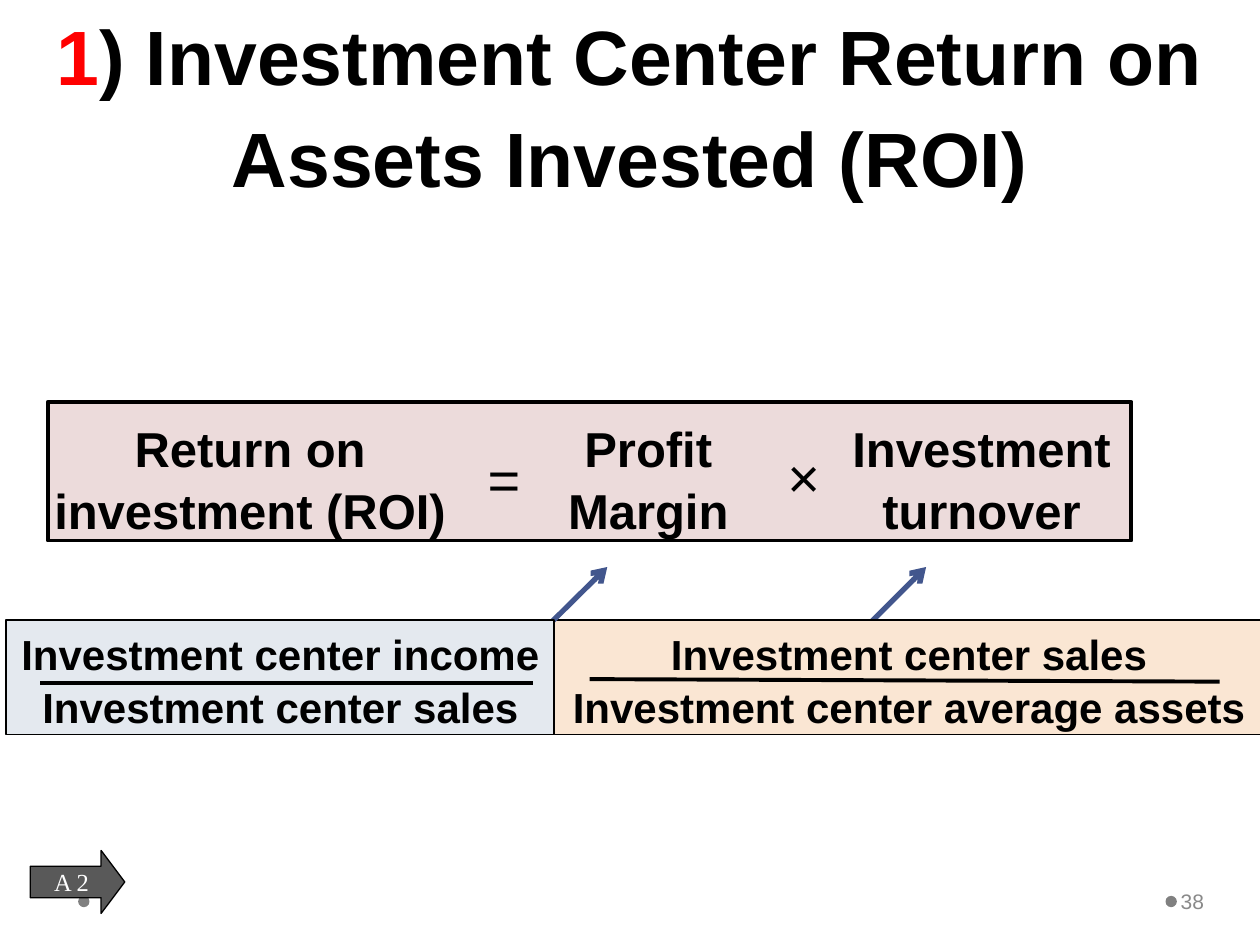
from dataclasses import dataclass

from lxml import etree
from pptx import Presentation
from pptx.dml.color import RGBColor
from pptx.enum import shapes, text
from pptx.oxml import ns
from pptx.util import Inches, Pt

BLACK = RGBColor(0x00, 0x00, 0x00)
WHITE = RGBColor(0xFF, 0xFF, 0xFF)
RED = RGBColor(0xFF, 0x00, 0x00)
DOT_GRAY = RGBColor(0x80, 0x80, 0x80)
NUMBER_GRAY = RGBColor(0x89, 0x89, 0x89)
ARROW_BLUE = RGBColor(0x42, 0x56, 0x8D)
FORMULA_PINK = RGBColor(0xEC, 0xDB, 0xDB)
SALES_ORANGE = RGBColor(0xFA, 0xE6, 0xD3)
INCOME_BLUE = RGBColor(0xE4, 0xE9, 0xEF)
BUTTON_GRAY = RGBColor(0x59, 0x59, 0x59)

CENTER = text.PP_ALIGN.CENTER
RECT = shapes.MSO_SHAPE.RECTANGLE


@dataclass
class Term:
    """A word or operator of the ROI formula."""
    wording: str
    left: float
    top: float
    width: float
    height: float = 1.04
    size: int = 28
    bold: bool = True


@dataclass
class Fraction:
    """A ratio in a box, with its bar and the arrow to its formula term."""
    wording: str
    left: float
    width: float
    fill: RGBColor
    bar: tuple[float, float, float, float]
    arrow: tuple[float, float, float, float]


TERMS = [
    Term("Return on\ninvestment (ROI)", 0.32, 3.25, 3.33),
    Term("=", 3.77, 3.45, 0.46, 0.64, 32, False),
    Term("Profit\nMargin", 4.23, 3.25, 1.83),
    Term("Investment\nturnover", 6.32, 3.25, 2.94),
    Term("×", 6.15, 3.44, 0.46, 0.64, 32, False),
]
FRACTIONS = [
    Fraction("Investment center sales\nInvestment center average assets", 4.4, 5.63,
             SALES_ORANGE, (4.68, 5.39, 9.68, 5.41), (6.52, 5.33, 7.35, 4.5)),
    Fraction("Investment center income\nInvestment center sales", 0.05, 4.35,
             INCOME_BLUE, (0.32, 5.42, 4.23, 5.42), (3.98, 5.33, 4.82, 4.5)),
]


def style_font(font, size: float, color: RGBColor, bold=False, name="Arial") -> None:
    font.name, font.size, font.bold = name, Pt(size), bold
    font.color.rgb = color


def write(shape, wording: str, size: float, color=BLACK, bold=False, name="Arial",
          align=CENTER, anchor=text.MSO_ANCHOR.TOP, wrap=True, spacing=1.05) -> None:
    frame = shape.text_frame
    frame.word_wrap = wrap
    frame.vertical_anchor = anchor
    paragraph = frame.paragraphs[0]
    paragraph.text = wording.replace("\n", "\v")
    paragraph.alignment = align
    paragraph.line_spacing = spacing
    for run in paragraph.runs:
        style_font(run.font, size, color, bold, name)


def add_filled(slide, kind, box: tuple, fill: RGBColor, line_width: float = 0):
    shape = slide.shapes.add_shape(kind, *map(Inches, box))
    shape.shadow.inherit = False
    shape.fill.solid()
    shape.fill.fore_color.rgb = fill
    if line_width:
        shape.line.color.rgb = BLACK
        shape.line.width = Pt(line_width)
    else:
        shape.line.fill.background()
    return shape


def add_line(slide, ends: tuple, color: RGBColor, width: float, arrow=False) -> None:
    line = slide.shapes.add_connector(shapes.MSO_CONNECTOR.STRAIGHT, *map(Inches, ends))
    line.line.color.rgb = color
    line.line.width = Pt(width)
    if arrow:
        etree.SubElement(line.line._get_or_add_ln(), ns.qn("a:tailEnd"), type="arrow")
    etree.SubElement(line._element.spPr, ns.qn("a:effectLst"))


def add_title(slide) -> None:
    title = slide.shapes.title
    title.left, title.top, title.width, title.height = map(Inches, (0, 0.41, 10, 1.25))
    frame = title.text_frame
    frame.word_wrap = True
    frame.auto_size = text.MSO_AUTO_SIZE.NONE
    frame.vertical_anchor = text.MSO_ANCHOR.BOTTOM
    paragraph = frame.paragraphs[0]
    paragraph.alignment = CENTER
    paragraph.line_spacing = Pt(58)
    for wording, color in (("1", RED),
                           (") Investment Center Return on Assets Invested (ROI)", BLACK)):
        run = paragraph.add_run()
        run.text = wording
        style_font(run.font, 44, color, True)


def add_term(slide, term: Term) -> None:
    box = slide.shapes.add_textbox(
        *map(Inches, (term.left, term.top, term.width, term.height)))
    write(box, term.wording, term.size, bold=term.bold, wrap=term.bold)


def add_fraction(slide, fraction: Fraction) -> None:
    add_line(slide, fraction.arrow, ARROW_BLUE, 3, arrow=True)
    box = add_filled(slide, RECT, (fraction.left, 4.92, fraction.width, 0.91),
                     fraction.fill, 1)
    write(box, fraction.wording, 24, bold=True)
    add_line(slide, fraction.bar, BLACK, 2.25)


def add_page_number(slide) -> None:
    number = slide.shapes.add_textbox(*map(Inches, (9.34, 6.95, 0.61, 0.4)))
    write(number, "38", 12, NUMBER_GRAY, align=text.PP_ALIGN.LEFT,
          anchor=text.MSO_ANCHOR.MIDDLE, spacing=1.0)
    number.text_frame.margin_left = Inches(0.03)
    number.text_frame.margin_right = Inches(0.05)


def main() -> None:
    deck = Presentation()
    deck.slide_width, deck.slide_height = Inches(10), Inches(7.5)
    slide = deck.slides.add_slide(deck.slide_layouts[5])

    for left in (9.25, 0.62):
        add_filled(slide, shapes.MSO_SHAPE.OVAL, (left, 7.11, 0.09, 0.09), DOT_GRAY)
    add_filled(slide, RECT, (0.38, 3.19, 8.6, 1.1), FORMULA_PINK, 2.25)
    add_title(slide)
    add_page_number(slide)
    for term in TERMS:
        add_term(slide, term)
    for fraction in FRACTIONS:
        add_fraction(slide, fraction)

    button = add_filled(slide, shapes.MSO_SHAPE.RIGHT_ARROW, (0.24, 6.75, 0.75, 0.5),
                        BUTTON_GRAY, 0.75)
    button.adjustments[0], button.adjustments[1] = 0.5, 0.375
    write(button, "A 2", 14, WHITE, name="Times New Roman",
          anchor=text.MSO_ANCHOR.MIDDLE, wrap=False, spacing=1.0)

    deck.save("out.pptx")


if __name__ == "__main__":
    main()
